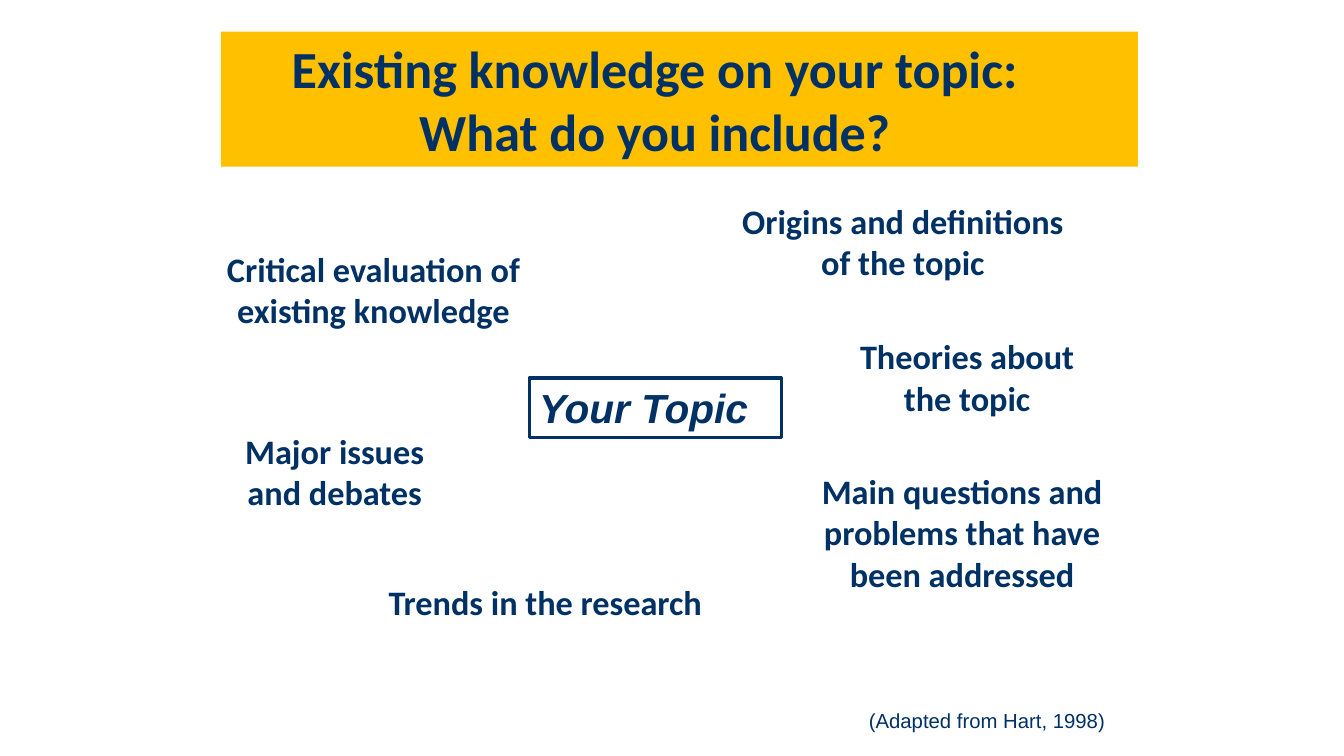
"""Build a slide that maps what to include about existing knowledge on a topic."""
from dataclasses import dataclass

from pptx import Presentation
from pptx.dml.color import RGBColor
from pptx.enum.shapes import MSO_SHAPE
from pptx.enum.text import MSO_ANCHOR, MSO_AUTO_SIZE, PP_ALIGN
from pptx.shapes.autoshape import Shape
from pptx.util import Pt

NAVY = RGBColor(0x00, 0x31, 0x64)
AMBER = RGBColor(0xFF, 0xC0, 0x00)
WHITE = RGBColor(0xFF, 0xFF, 0xFF)


@dataclass(frozen=True)
class Label:
    text: str
    left: float
    top: float
    width: float
    height: float
    font: str = "Calibri"
    size: float = 24.5
    bold: bool = True
    align: PP_ALIGN = PP_ALIGN.CENTER


LABELS = (
    Label("(Adapted from Hart, 1998)", 613.5, 502.5, 222.5, 25,
          font="Arial", size=14.5, bold=False, align=PP_ALIGN.LEFT),
    Label("Trends in the research", 269.3, 411.8, 240.5, 37.5),
    Label("Origins and definitions of the topic", 512, 139.7, 266, 67),
    Label("Main questions and problems that have been addressed", 558, 332.6, 258.5, 96.5),
    Label("Major issues and debates", 149.8, 303.8, 178.5, 67),
    Label("Theories about the topic", 600.5, 236.2, 180.7, 67),
    Label("Critical evaluation of existing knowledge", 119.5, 173.5, 294.5, 67),
)


def write(box: Shape, text: str, *, font: str, size: float, bold: bool = True,
          italic: bool = False, align: PP_ALIGN = PP_ALIGN.CENTER,
          anchor: MSO_ANCHOR = MSO_ANCHOR.TOP,
          fit: MSO_AUTO_SIZE = MSO_AUTO_SIZE.SHAPE_TO_FIT_TEXT) -> None:
    frame = box.text_frame
    frame.text = text
    frame.word_wrap = True
    frame.auto_size = fit
    frame.vertical_anchor = anchor
    for para in frame.paragraphs:
        para.alignment = align
        for span in para.runs:
            span.font.name = font
            span.font.size = Pt(size)
            span.font.bold = bold
            span.font.italic = italic
            span.font.color.rgb = NAVY


def place_title(title: Shape) -> None:
    title.left, title.top = Pt(157.7), Pt(22.5)
    title.width, title.height = Pt(655.2), Pt(96.5)
    title.fill.solid()
    title.fill.fore_color.rgb = AMBER
    write(title, "Existing knowledge on your topic:\nWhat do you include?",
          font="Calibri", size=37.2, anchor=MSO_ANCHOR.MIDDLE, fit=MSO_AUTO_SIZE.NONE)
    first = title.text_frame.paragraphs[0]
    first._p.get_or_add_pPr().set("marR", str(Pt(35)))


def main() -> None:
    deck = Presentation()
    deck.slide_width, deck.slide_height = Pt(960), Pt(540)
    page = deck.slides.add_slide(deck.slide_layouts[5])
    page.background.fill.solid()
    page.background.fill.fore_color.rgb = WHITE
    place_title(page.shapes.title)

    for label in LABELS:
        box = page.shapes.add_textbox(Pt(label.left), Pt(label.top),
                                      Pt(label.width), Pt(label.height))
        write(box, label.text, font=label.font, size=label.size,
              bold=label.bold, align=label.align)

    topic = page.shapes.add_shape(MSO_SHAPE.RECTANGLE, Pt(378), Pt(270), Pt(180), Pt(42.5))
    topic.shadow.inherit = False
    topic.fill.background()
    topic.line.color.rgb = NAVY
    topic.line.width = Pt(2.25)
    write(topic, "Your Topic", font="Arial", size=29, italic=True, align=PP_ALIGN.LEFT)

    deck.save("out.pptx")


if __name__ == "__main__":
    main()
